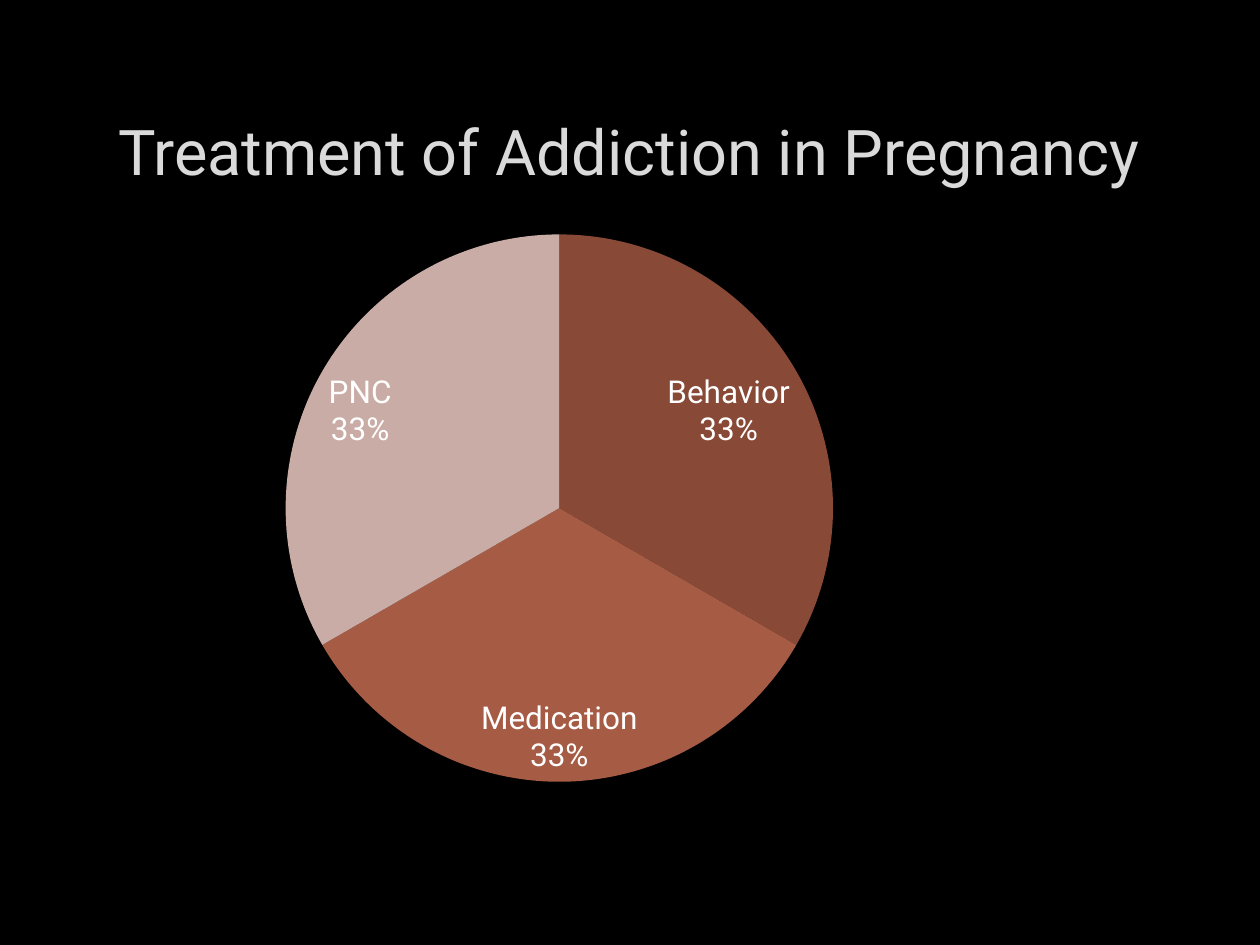
from lxml import etree
from pptx import Presentation
from pptx.chart.data import CategoryChartData
from pptx.dml.color import RGBColor
from pptx.enum.chart import XL_CHART_TYPE as ChartType, XL_LABEL_POSITION as LabelPosition
from pptx.enum.text import MSO_ANCHOR as Anchor, PP_ALIGN as Align
from pptx.oxml import parse_xml
from pptx.oxml.ns import nsdecls
from pptx.util import Pt

FONT = "Roboto"
COLORS = {
    "background": "000000",
    "title": "DADADA",
    "label": "FFFFFF",
    "Behavior": "884937",
    "Medication": "A65B44",
    "PNC": "C9ACA6",
}
TREATMENTS = {"Behavior": 33, "Medication": 33, "PNC": 33}


def color(name):
    return RGBColor.from_string(COLORS[name])


def set_font(font, size, name):
    font.name = FONT
    font.size = Pt(size)
    font.color.rgb = color(name)


def place_title(slide, left, top, width, height):
    title = slide.shapes.title
    title.left, title.top = Pt(left), Pt(top)
    title.width, title.height = Pt(width), Pt(height)
    frame = title.text_frame
    frame.text = "Treatment of Addiction in Pregnancy"
    frame.vertical_anchor = Anchor.MIDDLE
    frame.word_wrap = True
    heading = frame.paragraphs[0]
    heading.alignment = Align.CENTER
    set_font(heading.font, 36, "title")


def fix_pie_area(chart, x, y, w, h):
    layout = parse_xml(f"<c:layout {nsdecls('c')}><c:manualLayout/></c:layout>")
    settings = {"layoutTarget": "inner", "xMode": "edge", "yMode": "edge",
                "x": x, "y": y, "w": w, "h": h}
    for tag, value in settings.items():
        etree.SubElement(layout[0], f"{{{layout.nsmap['c']}}}{tag}", val=str(value))
    plot_area = chart.plots[0]._element.getparent()
    for automatic in plot_area.findall("c:layout", layout.nsmap):
        plot_area.remove(automatic)
    plot_area.insert(0, layout)


def place_treatment_pie(slide, left, top, width, height):
    data = CategoryChartData()
    data.categories = list(TREATMENTS)
    data.add_series("Series 1", list(TREATMENTS.values()))
    chart = slide.shapes.add_chart(
        ChartType.PIE, Pt(left), Pt(top), Pt(width), Pt(height), data).chart
    chart.has_legend = False
    chart.has_title = False
    set_font(chart.font, 18, "label")
    fix_pie_area(chart, 0.17, 0.03, 0.55, 0.82)

    pie = chart.plots[0]
    for index, treatment in enumerate(TREATMENTS):
        slice_format = pie.series[0].points[index].format
        slice_format.fill.solid()
        slice_format.fill.fore_color.rgb = color(treatment)
        slice_format.line.fill.background()

    pie.has_data_labels = True
    labels = pie.data_labels
    set_font(labels.font, 18, "label")
    labels.number_format = "0%"
    labels.number_format_is_linked = False
    labels.position = LabelPosition.INSIDE_END
    labels.show_category_name = True
    labels.show_percentage = True
    labels.show_value = False
    separator = parse_xml(f"<c:separator {nsdecls('c')}>\n</c:separator>")
    labels._element.find("c:showBubbleSize", separator.nsmap).addnext(separator)


def main():
    deck = Presentation()
    deck.slide_width, deck.slide_height = Pt(720), Pt(540)
    slide = deck.slides.add_slide(deck.slide_layouts[5])
    slide.background.fill.solid()
    slide.background.fill.fore_color.rgb = color("background")
    place_title(slide, 54, 48, 611, 76)
    place_treatment_pie(slide, 66, 122.5, 570, 381.5)
    deck.save("out.pptx")


if __name__ == "__main__":
    main()
